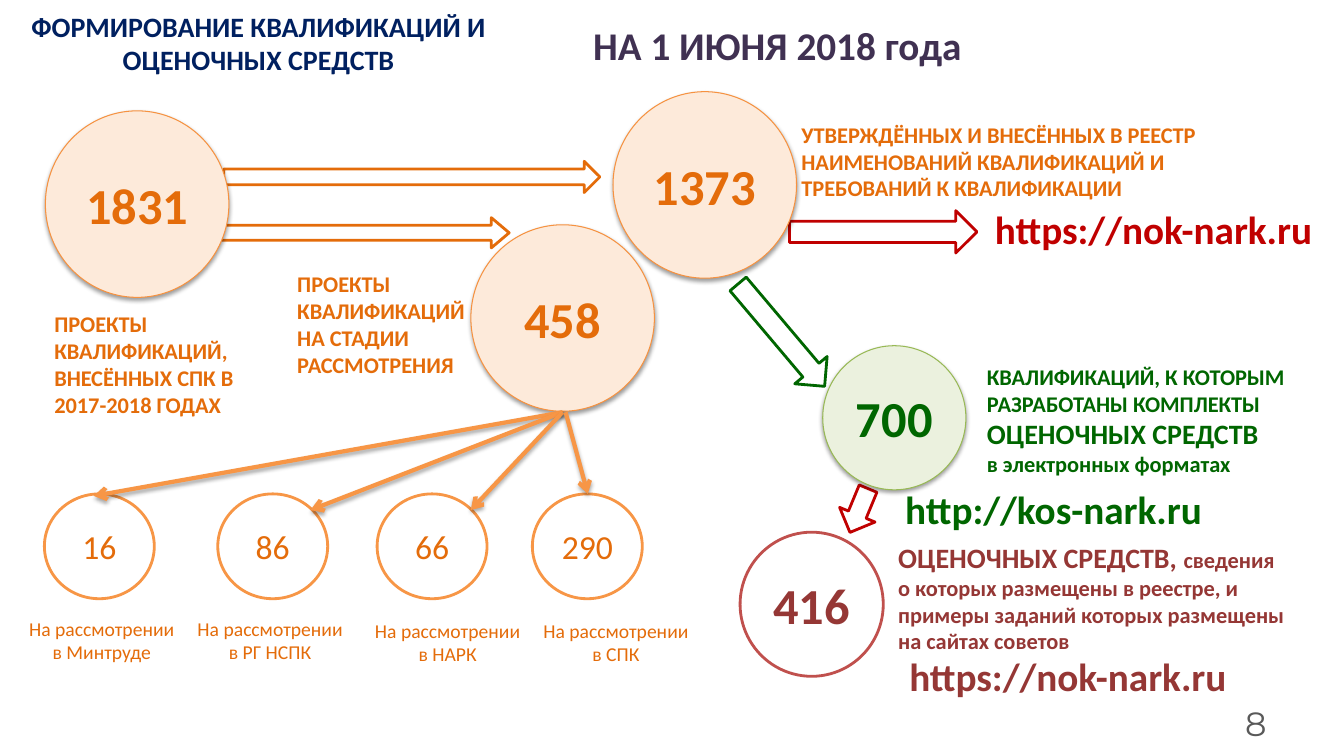
from dataclasses import dataclass
from typing import Optional

from lxml.etree import SubElement
from pptx import Presentation
from pptx.dml.color import RGBColor
from pptx.enum.shapes import MSO_CONNECTOR, MSO_SHAPE
from pptx.enum.text import MSO_ANCHOR, MSO_AUTO_SIZE, PP_ALIGN
from pptx.oxml.ns import qn
from pptx.util import Inches, Pt

COLORS = {
    "white": "FFFFFF", "black": "000000", "navy": "002060", "purple": "403152",
    "orange": "E46C0A", "light_orange": "F79646", "rim": "F69240",
    "peach": "FDEADA", "green": "006600", "leaf": "98B955", "mint": "EBF1DE",
    "red": "C00000", "brick": "C0504D", "maroon": "953735", "gray": "595959",
}
Paragraphs = list[list[tuple[str, float]]]


@dataclass
class Arrow:
    left: float
    top: float
    width: float
    height: float
    color: str
    kind: MSO_SHAPE = MSO_SHAPE.DOWN_ARROW
    rotation: float = 0
    filled: bool = True
    head: float = 0.5


@dataclass
class Circle:
    number: str
    left: float
    top: float
    width: float
    height: float
    fill: str
    line: str
    color: str
    line_width: float = 0.75
    size: float = 36
    bold: bool = True
    shadow: bool = True


@dataclass
class Label:
    left: float
    top: float
    width: float
    height: float
    color: str
    paragraphs: Paragraphs
    align: PP_ALIGN = PP_ALIGN.LEFT
    bold: bool = True
    wrap: bool = True
    font: str = "Calibri"


@dataclass
class Stage:
    number: str
    left: float
    caption: str
    caption_left: float
    caption_top: float
    link_start: float
    link_end: tuple[float, float]


ARROWS = [
    Arrow(2.22, 1.6, 3.73, 0.31, "orange", MSO_SHAPE.RIGHT_ARROW),
    Arrow(2.16, 2.16, 2.89, 0.3, "orange", MSO_SHAPE.RIGHT_ARROW, head=0.59),
    Arrow(8.55, 1.37, 0.42, 1.86, "red", rotation=270),
    Arrow(7.54, 2.66, 0.42, 1.33, "green", rotation=319.8),
    Arrow(8.33, 4.83, 0.38, 0.47, "red", rotation=22.5, filled=False),
]
CIRCLES = [
    Circle("1831", 0.45, 1.1, 1.82, 1.85, "peach", "rim", "orange"),
    Circle("458", 4.67, 2.23, 1.82, 1.85, "peach", "rim", "orange"),
    Circle("1373", 6.08, 0.91, 1.82, 1.85, "peach", "rim", "orange"),
    Circle("700", 8.16, 3.43, 1.42, 1.43, "mint", "leaf", "green"),
    Circle("416", 7.34, 5.28, 1.42, 1.43, "white", "brick", "maroon", 2, shadow=False),
]
STAGES = [
    Stage("16", 0.44, "На рассмотрении в Минтруде", 0.16, 6.07, 5.58, (0.93, 4.92)),
    Stage("86", 2.16, "На рассмотрении в РГ НСПК", 1.83, 6.07, 5.58, (3.08, 5.06)),
    Stage("66", 3.74, "На рассмотрении в НАРК", 3.59, 6.09, 5.58, (4.67, 5.06)),
    Stage("290", 5.28, "На рассмотрении в СПК", 5.26, 6.09, 5.61, (5.83, 4.9)),
]
LABELS = [
    Label(5.47, 0.16, 4.48, 0.57, "purple", [[("НА 1 ИЮНЯ 2018 года", 28)]], PP_ALIGN.CENTER),
    Label(7.85, 1.15, 4.29, 1.18, "orange", [[(
        "УТВЕРЖДЁННЫХ И ВНЕСЁННЫХ В РЕЕСТР НАИМЕНОВАНИЙ КВАЛИФИКАЦИЙ И "
        "ТРЕБОВАНИЙ К КВАЛИФИКАЦИИ", 16)]]),
    Label(0.44, 3.03, 2.13, 1.18, "orange", [[(
        "ПРОЕКТЫ КВАЛИФИКАЦИЙ, ВНЕСЁННЫХ СПК В 2017-2018 ГОДАХ", 16)]]),
    Label(2.85, 2.63, 1.96, 1.18, "orange", [[(
        "ПРОЕКТЫ КВАЛИФИКАЦИЙ НА СТАДИИ РАССМОТРЕНИЯ", 16)]]),
    Label(9.77, 1.99, 3.42, 0.57, "red", [[("https://nok-nark.ru", 28)]], wrap=False),
    Label(9.69, 3.55, 3.27, 1.24, "green", [
        [("КВАЛИФИКАЦИЙ, К КОТОРЫМ РАЗРАБОТАНЫ КОМПЛЕКТЫ ", 16), ("ОЦЕНОЧНЫХ СРЕДСТВ", 20)],
        [("в электронных форматах", 16)],
    ]),
    Label(8.88, 4.77, 3.47, 0.57, "green", [[("http://kos-nark.ru", 28)]]),
    Label(8.81, 5.31, 4.05, 1.24, "maroon", [[
        ("ОЦЕНОЧНЫХ СРЕДСТВ, ", 20),
        ("сведения о которых размещены в реестре, и примеры заданий которых "
         "размещены на сайтах советов", 16),
    ]]),
    Label(8.92, 6.42, 3.47, 0.57, "maroon", [[("https://nok-nark.ru", 28)]]),
    Label(9.61, 6.92, 3.05, 0.44, "gray", [[("8", 24)]], PP_ALIGN.RIGHT,
          bold=False, font="Montserrat"),
]


def rgb(name: str) -> RGBColor:
    return RGBColor.from_string(COLORS[name])


def format_run(run, size: float, color: str, bold: bool, font: str = "Calibri") -> None:
    run.font.name = font
    run.font.size = Pt(size)
    run.font.bold = bold
    run.font.color.rgb = rgb(color)


def cast_shadow(effects, alpha: int, distance: float) -> None:
    shadow = SubElement(effects, qn("a:outerShdw"), blurRad=str(Pt(3.1)),
                        dist=str(Pt(distance)), dir="5400000", rotWithShape="0")
    tint = SubElement(shadow, qn("a:srgbClr"), val=COLORS["black"])
    SubElement(tint, qn("a:alpha"), val=str(alpha * 1000))


def add_outlined(slide, kind: MSO_SHAPE, box: tuple[float, ...], fill: Optional[str],
                 line: str, line_width: float):
    shape = slide.shapes.add_shape(kind, *map(Inches, box))
    if fill:
        shape.fill.solid()
        shape.fill.fore_color.rgb = rgb(fill)
    else:
        shape.fill.background()
    shape.line.color.rgb = rgb(line)
    shape.line.width = Pt(line_width)
    shape.shadow.inherit = False
    return shape


def add_arrow(slide, arrow: Arrow) -> None:
    shape = add_outlined(slide, arrow.kind, (arrow.left, arrow.top, arrow.width, arrow.height),
                         "white" if arrow.filled else None, arrow.color, 2)
    shape.rotation = arrow.rotation
    shape.adjustments[1] = arrow.head


def add_circle(slide, circle: Circle) -> None:
    shape = add_outlined(slide, MSO_SHAPE.OVAL,
                         (circle.left, circle.top, circle.width, circle.height),
                         circle.fill, circle.line, circle.line_width)
    if circle.shadow:
        cast_shadow(shape._element.spPr.find(qn("a:effectLst")), 38, 1.6)
    frame = shape.text_frame
    frame.text = circle.number
    frame.vertical_anchor = MSO_ANCHOR.MIDDLE
    frame.paragraphs[0].alignment = PP_ALIGN.CENTER
    format_run(frame.paragraphs[0].runs[0], circle.size, circle.color, circle.bold)


def add_label(slide, label: Label) -> None:
    box = (label.left, label.top, label.width, label.height)
    frame = slide.shapes.add_textbox(*map(Inches, box)).text_frame
    frame.word_wrap = label.wrap
    for index, pieces in enumerate(label.paragraphs):
        paragraph = frame.add_paragraph() if index else frame.paragraphs[0]
        paragraph.alignment = label.align
        for text, size in pieces:
            run = paragraph.add_run()
            run.text = text
            format_run(run, size, label.color, label.bold, label.font)


def add_stage(slide, stage: Stage) -> None:
    add_circle(slide, Circle(stage.number, stage.left, 4.9, 1.09, 1.04, "white",
                             "light_orange", "orange", 2, 24, False, False))
    add_label(slide, Label(stage.caption_left, stage.caption_top, 1.7, 0.57, "orange",
                           [[(stage.caption, 14)]], PP_ALIGN.CENTER, False))
    link = slide.shapes.add_connector(MSO_CONNECTOR.STRAIGHT, Inches(stage.link_start),
                                      Inches(4.09), *map(Inches, stage.link_end))
    link.line.color.rgb = rgb("light_orange")
    link.line.width = Pt(3)
    properties = link._element.spPr
    SubElement(properties.find(qn("a:ln")), qn("a:tailEnd"), type="arrow")
    cast_shadow(SubElement(properties, qn("a:effectLst")), 35, 1.8)


def set_title(slide, text: str) -> None:
    title = slide.shapes.title
    title.left, title.top, title.width, title.height = map(Inches, (-0.02, 0.04, 5.17, 0.77))
    frame = title.text_frame
    frame.text = text
    frame.word_wrap = True
    frame.auto_size = MSO_AUTO_SIZE.NONE
    frame.vertical_anchor = MSO_ANCHOR.TOP
    frame.paragraphs[0].alignment = PP_ALIGN.CENTER
    format_run(frame.paragraphs[0].runs[0], 20, "navy", True)


def main() -> None:
    deck = Presentation()
    deck.slide_width, deck.slide_height = Inches(13.33), Inches(7.5)
    slide = deck.slides.add_slide(deck.slide_layouts[5])
    set_title(slide, "ФОРМИРОВАНИЕ КВАЛИФИКАЦИЙ И ОЦЕНОЧНЫХ СРЕДСТВ")
    for items, draw in ((ARROWS, add_arrow), (CIRCLES, add_circle),
                        (STAGES, add_stage), (LABELS, add_label)):
        for item in items:
            draw(slide, item)
    deck.save("out.pptx")


if __name__ == "__main__":
    main()
